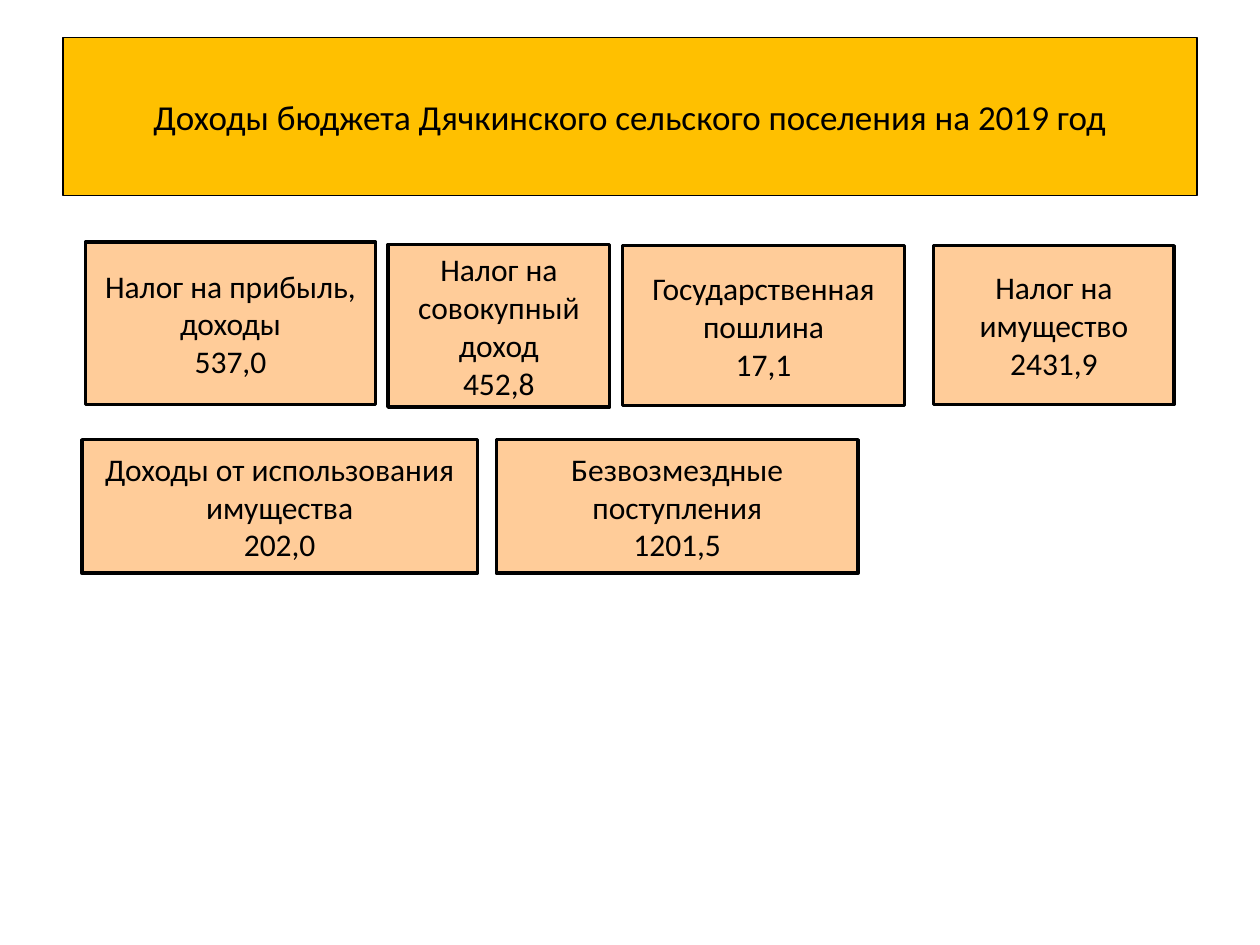
"""Build the slide of settlement budget income for 2019."""
from pptx import Presentation
from pptx.dml.color import RGBColor
from pptx.enum.shapes import MSO_SHAPE as Shape
from pptx.enum.text import MSO_ANCHOR as Anchor, PP_ALIGN as Align
from pptx.util import Inches, Pt

AMBER = RGBColor(0xFF, 0xC0, 0x00)
PEACH = RGBColor(0xFF, 0xCC, 0x99)
BLACK = RGBColor(0, 0, 0)

deck = Presentation()
deck.slide_width, deck.slide_height = Inches(10), Inches(7.5)
slide = deck.slides.add_slide(deck.slide_layouts[6])
column = deck.slide_width / 100
row = deck.slide_height / 75


def add_box(left, top, width, height, lines, fill, border, size):
    box = slide.shapes.add_shape(
        Shape.RECTANGLE,
        round(left * column), round(top * row),
        round(width * column), round(height * row),
    )
    box.shadow.inherit = False
    box.fill.solid()
    box.fill.fore_color.rgb = fill
    box.line.color.rgb = BLACK
    box.line.width = Pt(border)
    frame = box.text_frame
    frame.word_wrap = True
    frame.vertical_anchor = Anchor.MIDDLE
    for index, line in enumerate(lines):
        paragraph = frame.add_paragraph() if index else frame.paragraphs[0]
        paragraph.alignment = Align.CENTER
        run = paragraph.add_run()
        run.text = line
        run.font.name = "Calibri"
        run.font.size = Pt(size)
        run.font.color.rgb = BLACK


heading = "Доходы бюджета Дячкинского сельского поселения на 2019 год"
add_box(5, 3, 90, 12.5, [heading], AMBER, 0.75, 20)

incomes = [
    (6.8, 19.2, 23, 12.9, "Налог на прибыль, доходы", "537,0"),
    (30.8, 19.4, 17.6, 12.9, "Налог на совокупный доход", "452,8"),
    (49.4, 19.5, 22.4, 12.7, "Государственная пошлина", "17,1"),
    (74.1, 19.5, 19.1, 12.6, "Налог на имущество", "2431,9"),
    (6.5, 34.9, 31.4, 10.6, "Доходы от использования имущества", "202,0"),
    (39.4, 34.9, 28.7, 10.6, "Безвозмездные поступления", "1201,5"),
]
for left, top, width, height, source, amount in incomes:
    add_box(left, top, width, height, [source, amount], PEACH, 2, 18)

deck.save("out.pptx")
